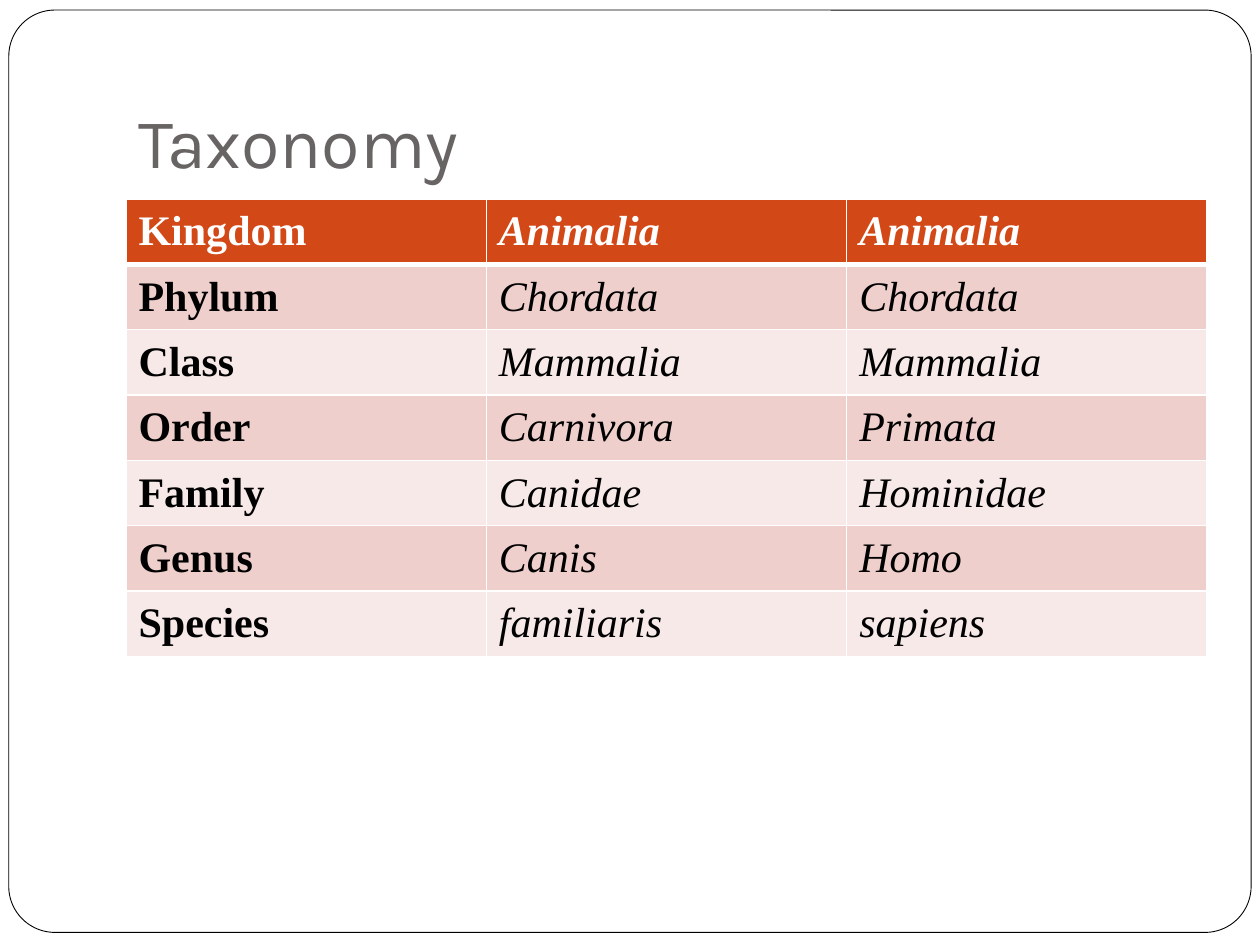
import pptx
import pptx.dml.color
import pptx.enum.shapes
import pptx.enum.text
import pptx.oxml.ns
import pptx.util
from lxml import etree

Inches = pptx.util.Inches
Pt = pptx.util.Pt
MIDDLE = pptx.enum.text.MSO_ANCHOR.MIDDLE
BOTTOM = pptx.enum.text.MSO_ANCHOR.BOTTOM

RANKS = [
    ("Kingdom", "Animalia", "Animalia"),
    ("Phylum", "Chordata", "Chordata"),
    ("Class", "Mammalia", "Mammalia"),
    ("Order", "Carnivora", "Primata"),
    ("Family", "Canidae", "Hominidae"),
    ("Genus", "Canis", "Homo"),
    ("Species", "familiaris", "sapiens"),
]


def color(hex_code):
    return pptx.dml.color.RGBColor.from_string(hex_code)


def paint(fill, hex_code):
    fill.solid()
    fill.fore_color.rgb = color(hex_code)


def add_border(cell, side, hex_code, points):
    """Draw one cell side (L, R, T or B); call before filling the cell."""
    tag = pptx.oxml.ns.qn
    line = etree.SubElement(cell._tc.get_or_add_tcPr(), tag(f"a:ln{side}"), w=str(Pt(points)))
    solid = etree.SubElement(line, tag("a:solidFill"))
    etree.SubElement(solid, tag("a:srgbClr"), val=hex_code)


class TaxonomySlide:
    """Holds the slide and its style."""

    title_font, table_font = "Karla", "Times New Roman"
    paper, ink, title_ink = "FFFFFF", "000000", "696464"
    header, bands = "D34817", ("F7E9E8", "EFCFCC")

    def __init__(self, slide):
        self.slide = slide
        paint(slide.background.fill, self.paper)

    def add_run(self, paragraph, text, font, size, hex_code, bold=False, italic=False):
        run = paragraph.add_run()
        run.text = text
        run.font.name = font
        run.font.size = Pt(size)
        run.font.bold = bold
        run.font.italic = italic
        run.font.color.rgb = color(hex_code)

    def add_frame(self, left, top, width, height):
        frame = self.slide.shapes.add_shape(
            pptx.enum.shapes.MSO_SHAPE.ROUNDED_RECTANGLE,
            Inches(left), Inches(top), Inches(width), Inches(height))
        frame.adjustments[0] = 0.05
        frame.shadow.inherit = False
        paint(frame.fill, self.paper)
        frame.line.color.rgb = color(self.ink)
        frame.line.width = Pt(0.5)

    def add_title(self, text, left, top, width, height):
        title = self.slide.shapes.add_textbox(
            Inches(left), Inches(top), Inches(width), Inches(height)).text_frame
        title.word_wrap = True
        title.vertical_anchor = BOTTOM
        title.margin_bottom = Inches(0.1)
        self.add_run(title.paragraphs[0], text, self.title_font, 40, self.title_ink)

    def add_table(self, rows, left, top, width, height):
        table = self.slide.shapes.add_table(
            len(rows), len(rows[0]),
            Inches(left), Inches(top), Inches(width), Inches(height)).table
        for row, names in enumerate(rows):
            for column, name in enumerate(names):
                self.fill_cell(table.cell(row, column), name, row, column)

    def fill_cell(self, cell, name, row, column):
        is_header = row == 0
        for side in "LRTB":
            thick = (is_header and side == "B") or (row == 1 and side == "T")
            add_border(cell, side, self.paper, 3 if thick else 1)
        paint(cell.fill, self.header if is_header else self.bands[row % 2])
        cell.vertical_anchor = MIDDLE
        self.add_run(cell.text_frame.paragraphs[0], name, self.table_font, 24,
                     self.paper if is_header else self.ink,
                     bold=is_header or column == 0, italic=column > 0)


def main():
    deck = pptx.Presentation()
    deck.slide_width, deck.slide_height = Inches(10), Inches(7.5)
    page = TaxonomySlide(deck.slides.add_slide(deck.slide_layouts[6]))
    page.add_frame(0.07, 0.08, 9.86, 7.32)
    page.add_title("Taxonomy", 1, 0.3, 8.5, 1.25)
    page.add_table(RANKS, 1, 1.58, 8.58, 3.63)
    deck.save("out.pptx")


if __name__ == "__main__":
    main()
